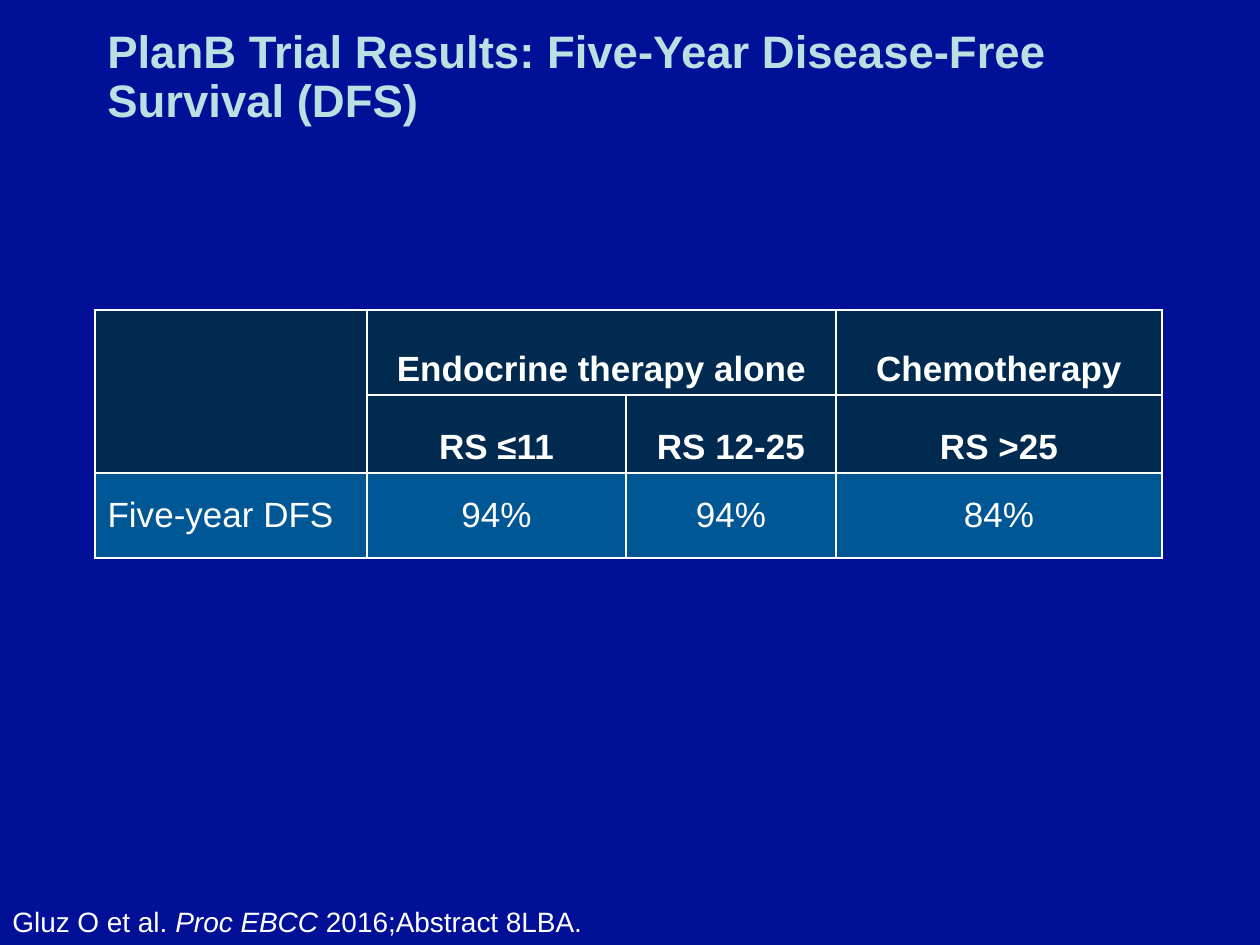
"""Build the PlanB five-year disease-free survival slide."""
from lxml import etree
from pptx import Presentation
from pptx.dml.color import RGBColor
from pptx.enum.text import MSO_ANCHOR, PP_ALIGN
from pptx.oxml.ns import qn
from pptx.util import Pt

TOP, MID, LOW = MSO_ANCHOR.TOP, MSO_ANCHOR.MIDDLE, MSO_ANCHOR.BOTTOM
LEFT, MIDST = PP_ALIGN.LEFT, PP_ALIGN.CENTER
PX = 914400 // 126
FONT = "Arial"
WHITE, PALE, BACK = "FFFFFF", "BBE0E3", "011097"
NAVY, BLUE = "012A50", "005796"

TITLE = "PlanB Trial Results: Five-Year Disease-Free Survival (DFS)"
CITE = [("Gluz O et al. ", False), ("Proc EBCC ", True),
        ("2016;Abstract 8LBA.", False)]
ROWS = [
    ["", "Endocrine therapy alone", "", "Chemotherapy"],
    ["", "RS ≤11", "RS 12-25", "RS >25"],
    ["Five-year DFS", "94%", "94%", "84%"],
]
SPANS = [((0, 0), (1, 0)), ((0, 1), (0, 2))]
HEADS = 2
WIDTHS = [272, 259, 210, 326]
HEIGHTS = [85, 78, 85]


def tint(code):
    return RGBColor.from_string(code)


def add_run(para, text, size, color=WHITE, bold=False, slant=False):
    run = para.add_run()
    run.text = text
    font = run.font
    font.name, font.size = FONT, Pt(size)
    font.bold, font.italic = bold, slant
    font.color.rgb = tint(color)


def add_box(slide, area, anchor):
    frame = slide.shapes.add_textbox(*(n * PX for n in area)).text_frame
    frame.word_wrap = True
    frame.vertical_anchor = anchor
    return frame.paragraphs[0]


def add_edges(cell):
    props = cell._tc.get_or_add_tcPr()
    for at, side in enumerate(("lnL", "lnR", "lnT", "lnB")):
        line = etree.Element(qn("a:" + side), w=str(Pt(1)))
        fill = etree.SubElement(line, qn("a:solidFill"))
        etree.SubElement(fill, qn("a:srgbClr"), val=WHITE)
        props.insert(at, line)


def add_grid(slide, left, top):
    area = (left, top, sum(WIDTHS), sum(HEIGHTS))
    grid = slide.shapes.add_table(
        len(ROWS), len(WIDTHS), *(n * PX for n in area)).table
    for col, width in zip(grid.columns, WIDTHS):
        col.width = width * PX
    for row, height in zip(grid.rows, HEIGHTS):
        row.height = height * PX
    for start, end in SPANS:
        grid.cell(*start).merge(grid.cell(*end))
    for r, row in enumerate(ROWS):
        head = r < HEADS
        for c, text in enumerate(row):
            cell = grid.cell(r, c)
            cell.fill.solid()
            cell.fill.fore_color.rgb = tint(NAVY if head else BLUE)
            add_edges(cell)
            cell.vertical_anchor = LOW if head else MID
            if text:
                para = cell.text_frame.paragraphs[0]
                para.alignment = MIDST if c else LEFT
                add_run(para, text, 20, bold=head)


def main():
    deck = Presentation()
    deck.slide_width, deck.slide_height = 1260 * PX, 945 * PX
    slide = deck.slides.add_slide(deck.slide_layouts[6])
    slide.background.fill.solid()
    slide.background.fill.fore_color.rgb = tint(BACK)

    add_grid(slide, 95, 310)
    para = add_box(slide, (0, 898, 1232, 47), TOP)
    for text, slant in CITE:
        add_run(para, text, 16, slant=slant)
    para = add_box(slide, (95, 0, 1071, 157), MID)
    para.line_spacing = 0.9
    add_run(para, TITLE, 26, PALE, bold=True)
    deck.save("out.pptx")


if __name__ == "__main__":
    main()
